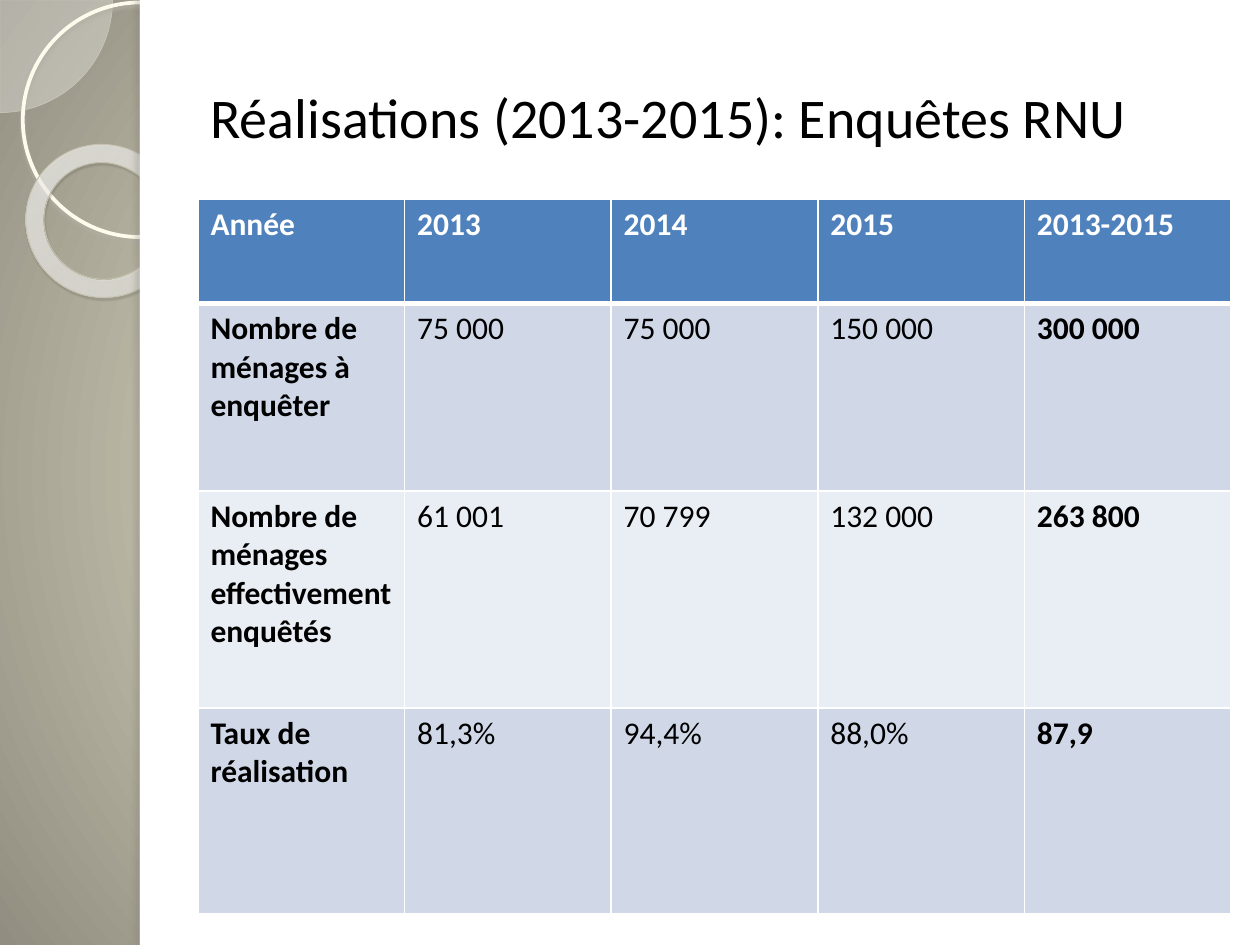
"""Build a slide with a table of survey results by year."""
from pptx import Presentation
from pptx.dml.color import RGBColor as Rgb
from pptx.enum.shapes import MSO_SHAPE as Geo
from pptx.enum.text import MSO_ANCHOR as Anchor, PP_ALIGN as Align
from pptx.oxml import parse_xml as to_xml
from pptx.oxml.ns import nsdecls, qn
from pptx.util import Cm, Pt

HUES = {
    "white": "FFFFFF", "black": "000000", "head": "4F81BD",
    "odd": "D0D8E8", "even": "E9EDF4",
    "glow": "FCF7DD", "dusk": "918E81",
    "pie": "FDFDF9", "rim": "D1CEBB", "ring": "FEFBEC",
    "pale": "FEFDFA", "milk": "FFFFFC", "sand": "E2DBB7", "edge": "C5C1AE",
    "haze": "B2B0A4", "deep": "5A5850", "side": "77756F",
}
NS = nsdecls("a")
ROWS = [
    ["Année", "2013", "2014", "2015", "2013-2015"],
    ["Nombre de ménages à enquêter", "75 000", "75 000", "150 000", "300 000"],
    ["Nombre de ménages effectivement enquêtés",
     "61 001", "70 799", "132 000", "263 800"],
    ["Taux de réalisation", "81,3%", "94,4%", "88,0%", "87,9"],
]
HIGH = [2.11, 3.78, 4.37, 4.14]


def tint(name, alpha=100):
    return f'<a:srgbClr val="{HUES[name]}"><a:alpha val="{alpha * 1000}"/></a:srgbClr>'


def radial(stops, box):
    marks = "".join(f'<a:gs pos="{pos * 1000}">{tint(name, alpha)}</a:gs>'
                    for pos, name, alpha in stops)
    rect = " ".join(f'{key}="{val * 1000}"' for key, val in zip("ltrb", box))
    return to_xml(f'<a:gradFill {NS} rotWithShape="1"><a:gsLst>{marks}</a:gsLst>'
                  f'<a:path path="circle"><a:fillToRect {rect}/></a:path></a:gradFill>')


class Deck:
    """Hold the style and the current slide."""

    def __init__(self, font="Calibri"):
        self.font = font
        self.show = Presentation()
        self.show.slide_width, self.show.slide_height = Cm(25.4), Cm(19.05)
        self.slide = self.show.slides.add_slide(self.show.slide_layouts[5])

    def back(self, stops, box):
        self.slide.background.fill.solid()
        base = self.slide.element.find(".//" + qn("p:bgPr"))
        base.replace(base[0], radial(stops, box))

    def shape(self, kind, at, fill=None, alpha=100, grad=None, line=None,
              shade=None, adj=(), turn=0):
        item = self.slide.shapes.add_shape(kind, *map(Cm, at))
        item.shadow.inherit = False
        item.rotation = turn
        for pos, val in enumerate(adj):
            item.adjustments[pos] = val
        props = item.element.spPr
        if fill or grad:
            item.fill.solid()
            new = radial(*grad) if grad else to_xml(
                f'<a:solidFill {NS}>{tint(fill, alpha)}</a:solidFill>')
            props.replace(props.find(qn("a:solidFill")), new)
        else:
            item.fill.background()
        if line:
            item.line.color.rgb = Rgb.from_string(HUES[line[0]])
            item.line.width = Pt(line[1])
        else:
            item.line.fill.background()
        if shade:
            name, clear, blur, dist, angle = shade
            props.find(qn("a:effectLst")).append(to_xml(
                f'<a:outerShdw {NS} blurRad="{Pt(blur)}" dist="{Pt(dist)}" '
                f'dir="{angle * 60000}" algn="ctr" rotWithShape="0">'
                f'{tint(name, clear)}</a:outerShdw>'))

    def text(self, frame, words, size, hue, bold=False):
        run = frame.paragraphs[0].add_run()
        run.text = words
        font = run.font
        font.name, font.size, font.bold = self.font, Pt(size), bold
        font.color.rgb = Rgb.from_string(HUES[hue])

    def title(self, words, at):
        item = self.slide.shapes.title
        item.left, item.top, item.width, item.height = map(Cm, at)
        frame = item.text_frame
        frame.word_wrap = True
        frame.vertical_anchor = Anchor.MIDDLE
        frame.paragraphs[0].alignment = Align.LEFT
        self.text(frame, words, 32, "black")
        self.slide.shapes.element.append(item.element)

    def cell(self, cell, words, fill, hue, bold, top, low):
        props = cell._tc.get_or_add_tcPr()
        for side, width in zip("LRTB", (1, 1, top, low)):
            props.append(to_xml(
                f'<a:ln{side} {NS} w="{Pt(width)}"><a:solidFill>{tint("white")}'
                f'</a:solidFill></a:ln{side}>'))
        cell.fill.solid()
        cell.fill.fore_color.rgb = Rgb.from_string(HUES[fill])
        self.text(cell.text_frame, words, 18, hue, bold)

    def table(self, rows, at, high):
        wide = len(rows[0])
        grid = self.slide.shapes.add_table(len(rows), wide, *map(Cm, at)).table
        for col in grid.columns:
            col.width = Cm(at[2] / wide)
        for y, row in enumerate(rows):
            grid.rows[y].height = Cm(high[y])
            fill = "head" if y == 0 else "odd" if y % 2 else "even"
            for x, words in enumerate(row):
                self.cell(grid.cell(y, x), words, fill,
                          "black" if y else "white",
                          y == 0 or x in (0, wide - 1),
                          3 if y == 1 else 1, 1 if y else 3)


def main():
    deck = Deck()
    deck.back([(0, "glow", 100), (100, "dusk", 100)], (50, 50, 50, 50))
    deck.shape(Geo.PIE, (-2.27, -2.27, 4.54, 4.54), "pie", 33,
               line=("rim", 0.25), adj=(0, 54.02))
    deck.shape(Geo.OVAL, (0.46, 0.05, 4.73, 4.73), line=("ring", 2.15),
               shade=("haze", 85, 2, 2, 90))
    deck.shape(Geo.DONUT, (0.51, 2.92, 3.12, 3.07),
               grad=([(0, "pale", 70), (70, "milk", 55), (100, "sand", 60)],
                     (-408, -50, 508, 150)),
               line=("edge", 0.58), shade=("deep", 35, 1, 1.2, 75),
               adj=(0.12,), turn=38.6)
    deck.shape(Geo.RECTANGLE, (2.82, 0, 22.58, 19.05), "white")
    deck.shape(Geo.RECTANGLE, (2.82, 0, 0.2, 19.05), "white",
               shade=("side", 25, 3, 3, 180))
    deck.title("Réalisations (2013-2015): Enquêtes RNU", (3.99, 0.76, 20.83, 3.18))
    deck.table(ROWS, (3.99, 4.01, 20.83, sum(HIGH)), HIGH)
    deck.show.save("out.pptx")


if __name__ == "__main__":
    main()
